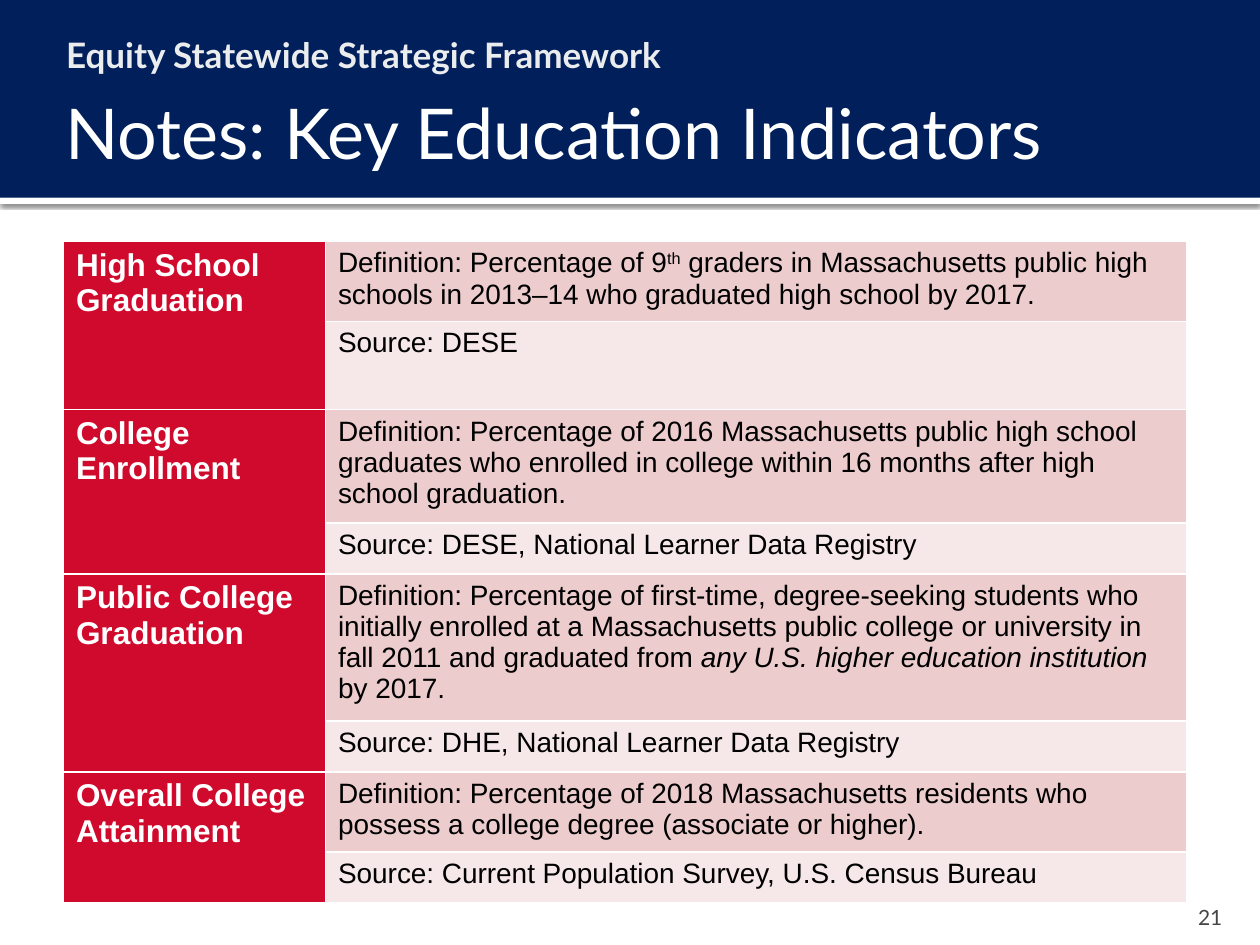
"""Build the key education indicators notes slide."""
from lxml import etree
from pptx import Presentation
from pptx.dml.color import RGBColor
from pptx.enum.shapes import MSO_SHAPE
from pptx.enum.text import MSO_ANCHOR, PP_ALIGN
from pptx.oxml import parse_xml
from pptx.oxml.ns import qn
from pptx.util import Pt

RECTANGLE = MSO_SHAPE.RECTANGLE
TOP, MIDDLE, BOTTOM = MSO_ANCHOR.TOP, MSO_ANCHOR.MIDDLE, MSO_ANCHOR.BOTTOM
LEFT, RIGHT = PP_ALIGN.LEFT, PP_ALIGN.RIGHT
DRAWING = "http://schemas.openxmlformats.org/drawingml/2006/main"

THEME = {
    "navy": "001F5B",
    "white": "FFFFFF",
    "red": "CF0A2C",
    "pink": "EDCCCD",
    "pale": "F6E7E8",
    "kicker": {"name": "Lato", "size": 20, "color": "EAECEE", "bold": True},
    "title": {"name": "Lato", "size": 40, "color": "FFFFFF", "bold": False},
    "number": {"name": "Lato", "size": 12, "color": "454545", "bold": False},
    "label": {"name": "Arial", "size": 18, "color": "FFFFFF", "bold": True},
    "body": {"name": "Arial", "size": 16, "color": "000000", "bold": False},
}

HEADINGS = [
    {"text": "Equity Statewide Strategic Framework", "style": "kicker",
     "box": (23.76, 11.7, 672.48, 36), "insets": (14, 7.2, 7.2, 3.6),
     "anchor": TOP, "align": LEFT},
    {"text": "Notes: Key Education Indicators", "style": "title",
     "box": (30.24, 41.76, 660.24, 66.24), "insets": (7.2, 3.6, 3.6, 3.6),
     "anchor": MIDDLE, "align": LEFT},
    {"text": "21", "style": "number",
     "box": (648, 509.76, 57.6, 21.6), "insets": (7.2, 3.6, 7.2, 0),
     "anchor": BOTTOM, "align": RIGHT},
]

INDICATORS = [
    ("High School Graduation",
     [("Definition: Percentage of 9", None), ("th", "superscript"),
      (" graders in Massachusetts public high schools in 2013–14 who "
       "graduated high school by 2017.", None)],
     "Source: DESE"),
    ("College Enrollment",
     [("Definition: Percentage of 2016 Massachusetts public high school "
       "graduates who enrolled in college within 16 months after high "
       "school graduation.", None)],
     "Source: DESE, National Learner Data Registry"),
    ("Public College Graduation",
     [("Definition: Percentage of first-time, degree-seeking students who "
       "initially enrolled at a Massachusetts public college or university "
       "in fall 2011 and graduated from ", None),
      ("any U.S. higher education institution ", "italic"),
      ("by 2017.", None)],
     "Source: DHE, National Learner Data Registry"),
    ("Overall College Attainment",
     [("Definition: Percentage of 2018 Massachusetts residents who possess "
       "a college degree (associate or higher).", None)],
     "Source: Current Population Survey, U.S. Census Bureau"),
]
TABLE_LEFT, TABLE_TOP, TABLE_HEIGHT = 36.25, 138, 357
COLUMN_WIDTHS = (149.75, 492)
ROW_HEIGHT = 29.2


def add_run(paragraph, text, style, variant=None):
    run = paragraph.add_run()
    run.text = text
    values = dict(THEME[style])
    run.font.color.rgb = RGBColor.from_string(values.pop("color"))
    values["size"] = Pt(values["size"])
    values["italic"] = variant == "italic"
    for name, value in values.items():
        setattr(run.font, name, value)
    if variant == "superscript":
        run._r.get_or_add_rPr().set("baseline", "30000")


def add_bar(slide, top, height, color):
    shape = slide.shapes.add_shape(RECTANGLE, 0, Pt(top), Pt(720), Pt(height))
    shape.shadow.inherit = False
    shape.fill.solid()
    shape.fill.fore_color.rgb = RGBColor.from_string(color)
    shape.line.fill.background()
    return shape


def add_shadow(shape):
    effects = shape._element.spPr.find(qn("a:effectLst"))
    effects.append(parse_xml(
        f'<a:outerShdw xmlns:a="{DRAWING}" blurRad="{Pt(2.5)}" '
        f'dist="{Pt(0.8)}" dir="5400000" algn="t" rotWithShape="0">'
        '<a:srgbClr val="000000"><a:alpha val="60000"/></a:srgbClr>'
        '</a:outerShdw>'))


def add_heading(slide, heading):
    shape = slide.shapes.add_textbox(*map(Pt, heading["box"]))
    frame = shape.text_frame
    sides = ("margin_left", "margin_top", "margin_right", "margin_bottom")
    values = dict(zip(sides, map(Pt, heading["insets"])))
    values.update(word_wrap=True, vertical_anchor=heading["anchor"])
    for name, value in values.items():
        setattr(frame, name, value)
    paragraph = frame.paragraphs[0]
    paragraph.alignment = heading["align"]
    add_run(paragraph, heading["text"], heading["style"])


def format_cell(cell, color):
    properties = cell._tc.get_or_add_tcPr()
    for side in ("lnL", "lnR", "lnT", "lnB"):
        line = etree.SubElement(properties, qn(f"a:{side}"), w=str(Pt(1)))
        fill = etree.SubElement(line, qn("a:solidFill"))
        etree.SubElement(fill, qn("a:srgbClr"), val=THEME["white"])
    cell.fill.solid()
    cell.fill.fore_color.rgb = RGBColor.from_string(THEME[color])


def add_indicator_table(slide):
    frame = slide.shapes.add_table(
        2 * len(INDICATORS), len(COLUMN_WIDTHS), Pt(TABLE_LEFT),
        Pt(TABLE_TOP), Pt(sum(COLUMN_WIDTHS)), Pt(TABLE_HEIGHT))
    table = frame.table
    for column, width in zip(table.columns, COLUMN_WIDTHS):
        column.width = Pt(width)
    for row in table.rows:
        row.height = Pt(ROW_HEIGHT)
    frame.height = Pt(TABLE_HEIGHT)
    for index, (label, definition, source) in enumerate(INDICATORS):
        first = 2 * index
        for row, color in ((first, "pink"), (first + 1, "pale")):
            format_cell(table.cell(row, 0), "red")
            format_cell(table.cell(row, 1), color)
        label_cell = table.cell(first, 0)
        label_cell.merge(table.cell(first + 1, 0))
        contents = (
            (label_cell, [(label, None)], "label"),
            (table.cell(first, 1), definition, "body"),
            (table.cell(first + 1, 1), [(source, None)], "body"),
        )
        for cell, runs, style in contents:
            for text, variant in runs:
                add_run(cell.text_frame.paragraphs[0], text, style, variant)


def main():
    presentation = Presentation()
    presentation.slide_width, presentation.slide_height = Pt(720), Pt(540)
    slide = presentation.slides.add_slide(presentation.slide_layouts[6])
    add_shadow(add_bar(slide, 113, 3.6, THEME["white"]))
    add_bar(slide, 0, 113, THEME["navy"])
    for heading in HEADINGS:
        add_heading(slide, heading)
    add_indicator_table(slide)
    presentation.save("out.pptx")


if __name__ == "__main__":
    main()
